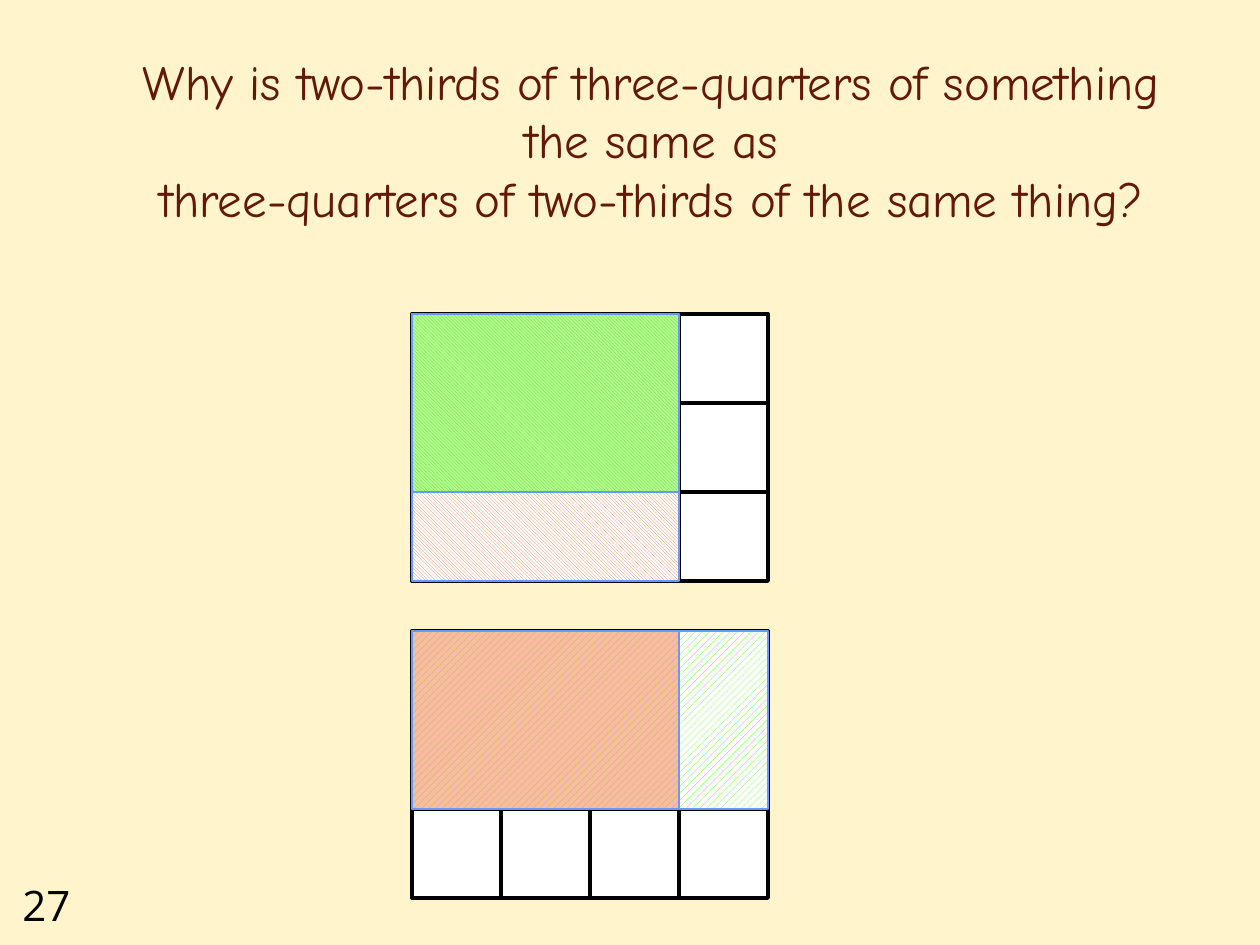
"""Build the slide comparing two-thirds of three-quarters with its reverse."""
from dataclasses import dataclass
from typing import Optional

from lxml import etree
from pptx import Presentation
from pptx import util as u
from pptx.dml.color import RGBColor
from pptx.enum import dml, shapes, text
from pptx.oxml.ns import qn

EMU_PER_PX = 914400 / 126
CELL = 89
COLUMNS, ROWS = 4, 3


@dataclass(frozen=True)
class Theme:
    background: str = "FFF2C0"
    title: str = "631908"
    ink: str = "000000"
    paper: str = "FFFFFF"
    edge: str = "6699FF"
    orange: str = "F57B49"
    green: str = "51FF1F"
    title_font: str = "Comic Neue"
    number_font: str = "Open Sans"
    title_size: int = 28
    number_size: int = 24
    grid_line: float = 2.25
    edge_line: float = 0.75


@dataclass(frozen=True)
class Shade:
    columns: int
    rows: int
    color: str
    pattern: Optional[dml.MSO_PATTERN_TYPE] = None


@dataclass(frozen=True)
class Diagram:
    left: int
    top: int
    shades: tuple[Shade, ...]


THEME = Theme()
DIAGRAMS = (
    Diagram(412, 314, (
        Shade(3, 3, THEME.orange, dml.MSO_PATTERN.LIGHT_DOWNWARD_DIAGONAL),
        Shade(3, 2, THEME.green),
    )),
    Diagram(412, 631, (
        Shade(4, 2, THEME.green, dml.MSO_PATTERN.WIDE_UPWARD_DIAGONAL),
        Shade(3, 2, THEME.orange),
    )),
)


def px(length: int) -> u.Emu:
    return u.Emu(round(length * EMU_PER_PX))


def rgb(color: str) -> RGBColor:
    return RGBColor.from_string(color)


def fill_solid(fill, color: str, opacity: int = 100) -> None:
    fill.solid()
    fill.fore_color.rgb = rgb(color)
    if opacity < 100:
        tint = fill._xPr.find(qn("a:solidFill")).find(qn("a:srgbClr"))
        etree.SubElement(tint, qn("a:alpha"), val=str(opacity * 1000))


def style_text(frame, font: str, size: int, color: str) -> None:
    for paragraph in frame.paragraphs:
        for run in paragraph.runs:
            run.font.name = font
            run.font.size = u.Pt(size)
            run.font.color.rgb = rgb(color)


def draw_rectangle(parent, left: int, top: int, columns: int, rows: int,
                   line_color: str, line_width: float):
    rectangle = parent.add_shape(
        shapes.MSO_SHAPE.RECTANGLE,
        px(left), px(top), px(columns * CELL), px(rows * CELL))
    rectangle.shadow.inherit = False
    rectangle.line.color.rgb = rgb(line_color)
    rectangle.line.width = u.Pt(line_width)
    return rectangle


def draw_diagram(slide, diagram: Diagram) -> None:
    grid = slide.shapes.add_group_shape()
    for row in range(ROWS):
        for column in range(COLUMNS):
            cell = draw_rectangle(
                grid.shapes, diagram.left + column * CELL, diagram.top + row * CELL,
                1, 1, THEME.ink, THEME.grid_line)
            fill_solid(cell.fill, THEME.paper)
    for shade in diagram.shades:
        area = draw_rectangle(slide.shapes, diagram.left, diagram.top,
                              shade.columns, shade.rows, THEME.edge, THEME.edge_line)
        if shade.pattern is None:
            fill_solid(area.fill, shade.color, 50)
        else:
            area.fill.patterned()
            area.fill.pattern = shade.pattern
            area.fill.fore_color.rgb = rgb(shade.color)
            area.fill.back_color.rgb = rgb(THEME.paper)


def draw_title(slide) -> None:
    question = slide.shapes.title
    question.left, question.top = px(42), px(21)
    question.width, question.height = px(1218), px(213)
    frame = question.text_frame
    frame.text = ("Why is two-thirds of three-quarters of something\v"
                  "the same as\v"
                  "three-quarters of two-thirds of the same thing?")
    frame.word_wrap = True
    frame.auto_size = text.MSO_AUTO_SIZE.NONE
    frame.vertical_anchor = text.MSO_ANCHOR.BOTTOM
    frame.paragraphs[0].alignment = text.PP_ALIGN.CENTER
    style_text(frame, THEME.title_font, THEME.title_size, THEME.title)


def draw_page_number(slide) -> None:
    page_number = slide.shapes.add_textbox(px(10), px(873), px(95), px(63))
    frame = page_number.text_frame
    frame.word_wrap = True
    frame.text = "27"
    style_text(frame, THEME.number_font, THEME.number_size, THEME.ink)


def main() -> None:
    deck = Presentation()
    deck.slide_width, deck.slide_height = px(1260), px(945)
    slide = deck.slides.add_slide(deck.slide_layouts[5])
    fill_solid(slide.background.fill, THEME.background, 82)
    draw_page_number(slide)
    draw_title(slide)
    for diagram in DIAGRAMS:
        draw_diagram(slide, diagram)
    deck.save("out.pptx")


if __name__ == "__main__":
    main()
